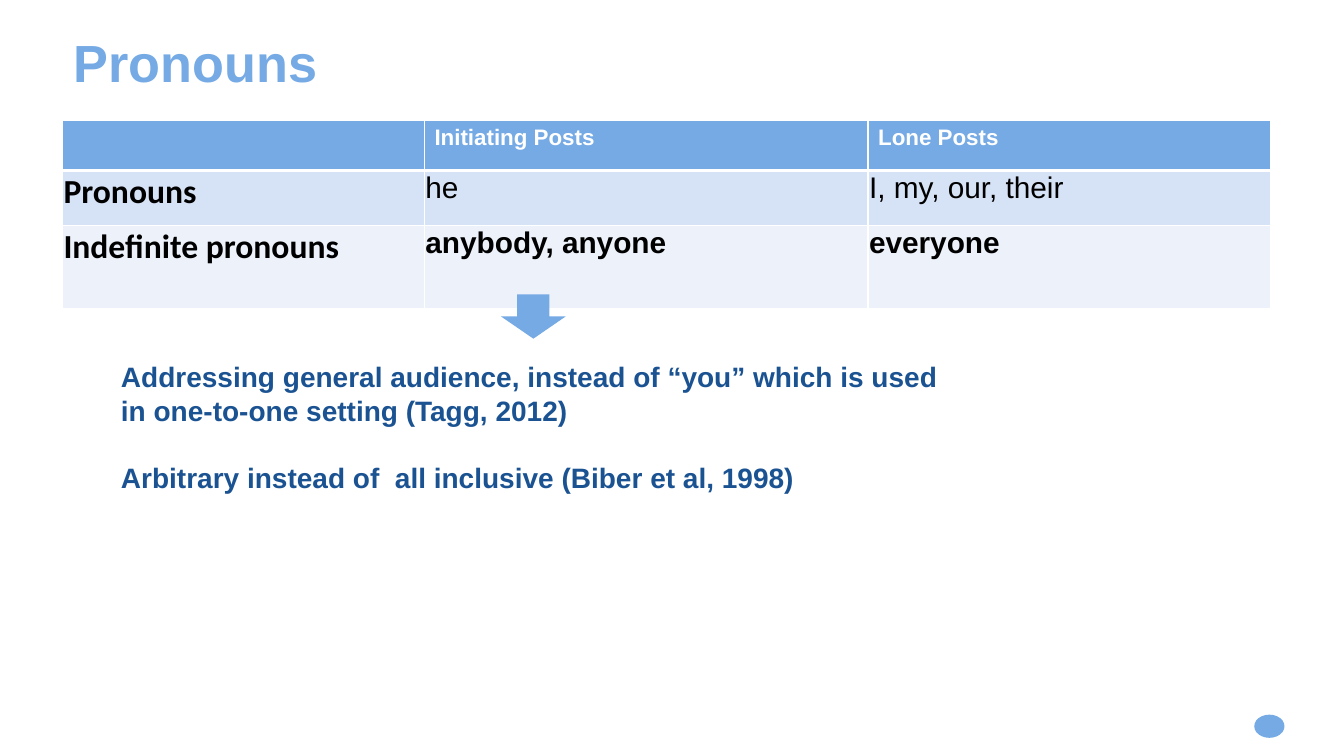
"""Build the Pronouns slide."""
from lxml import etree
from pptx import Presentation
from pptx.dml.color import RGBColor
from pptx.enum.shapes import MSO_SHAPE
from pptx.oxml.ns import qn
from pptx.util import Inches, Pt

OVAL = MSO_SHAPE.OVAL
DOWN_ARROW = MSO_SHAPE.DOWN_ARROW
SKY = RGBColor(0x75, 0xAA, 0xE5)
PALE = RGBColor(0xD6, 0xE2, 0xF5)
PALEST = RGBColor(0xEC, 0xF1, 0xFA)
NAVY = RGBColor(0x1B, 0x53, 0x92)
WHITE = RGBColor(0xFF, 0xFF, 0xFF)
BLACK = RGBColor(0, 0, 0)

COLUMN_WIDTHS = (3.59, 4.4, 3.99)
ROW_HEIGHTS = (0.5, 0.55, 0.82)
ROW_FILLS = (SKY, PALE, PALEST)
ROWS = (
    ("", "Initiating Posts", "Lone Posts"),
    ("Pronouns", "he", "I, my, our, their"),
    ("Indefinite pronouns", "anybody, anyone", "everyone"),
)
NOTES = (
    "Addressing general audience, instead of “you” which is used "
    "in one-to-one setting (Tagg, 2012)",
    "Arbitrary instead of  all inclusive (Biber et al, 1998)",
)


def add_run(paragraph, text, size, color, bold=True, font_name="Arial"):
    """Add one formatted run to a paragraph."""
    run = paragraph.add_run()
    run.text = text
    font = run.font
    font.name, font.size, font.bold = font_name, Pt(size), bold
    font.color.rgb = color


def add_text(slide, box, texts, size, color, line_spacing, gap=0):
    """Add a text box without margins, one paragraph per text."""
    frame = slide.shapes.add_textbox(*map(Inches, box)).text_frame
    frame.word_wrap = True
    frame.margin_left = frame.margin_right = 0
    frame.margin_top = frame.margin_bottom = 0
    for index, text in enumerate(texts):
        paragraph = frame.add_paragraph() if index else frame.paragraphs[0]
        paragraph.line_spacing = Pt(line_spacing)
        if index:
            paragraph.space_before = Pt(gap)
        add_run(paragraph, text, size, color)


def add_solid_shape(slide, kind, box):
    """Add a plain sky-blue shape."""
    shape = slide.shapes.add_shape(kind, *map(Inches, box))
    shape.shadow.inherit = False
    shape.fill.solid()
    shape.fill.fore_color.rgb = SKY
    shape.line.fill.background()


def set_borders(cell, widths):
    """Draw white borders of the given widths (left, right, top, bottom)."""
    properties = cell._tc.get_or_add_tcPr()
    for side, width in zip(("L", "R", "T", "B"), widths):
        line = etree.SubElement(properties, qn(f"a:ln{side}"), w=str(Pt(width)))
        fill = etree.SubElement(line, qn("a:solidFill"))
        etree.SubElement(fill, qn("a:srgbClr"), val=str(WHITE))


def fill_cell(cell, text, row, column):
    """Style one table cell by its row and column."""
    set_borders(cell, (1, 1, 3 if row == 1 else 1, 3 if row == 0 else 1))
    cell.fill.solid()
    cell.fill.fore_color.rgb = ROW_FILLS[row]
    if row:
        cell.margin_left = cell.margin_right = cell.margin_top = Inches(0.01)
        cell.margin_bottom = 0
    paragraph = cell.text_frame.paragraphs[0]
    if not text:
        paragraph.font.size = Pt(16)
    elif row == 0:
        add_run(paragraph, text, 16, WHITE)
    elif column == 0:
        add_run(paragraph, text, 24, BLACK, font_name="Calibri")
    else:
        add_run(paragraph, text, 21.3, BLACK, bold=row == 2)


def add_pronoun_table(slide):
    """Add the table that compares the two kinds of post."""
    box = (0.62, 1.19, sum(COLUMN_WIDTHS), sum(ROW_HEIGHTS))
    table = slide.shapes.add_table(
        len(ROWS), len(COLUMN_WIDTHS), *map(Inches, box)).table
    for column, width in zip(table.columns, COLUMN_WIDTHS):
        column.width = Inches(width)
    for row, height in zip(table.rows, ROW_HEIGHTS):
        row.height = Inches(height)
    for row, texts in enumerate(ROWS):
        for column, text in enumerate(texts):
            fill_cell(table.cell(row, column), text, row, column)


def main():
    """Build and save the slide."""
    presentation = Presentation()
    presentation.slide_width = Inches(13.33)
    presentation.slide_height = Inches(7.5)
    slide = presentation.slides.add_slide(presentation.slide_layouts[6])
    add_solid_shape(slide, OVAL, (12.44, 7.09, 0.3, 0.23))
    add_text(slide, (0.73, 0.32, 9.78, 0.55), ("Pronouns",), 37.3, SKY, 43.5)
    add_pronoun_table(slide)
    add_solid_shape(slide, DOWN_ARROW, (4.97, 2.92, 0.64, 0.44))
    add_text(slide, (1.2, 3.57, 8.36, 1.33), NOTES, 20, NAVY, 24, gap=24)
    presentation.save("out.pptx")


if __name__ == "__main__":
    main()
